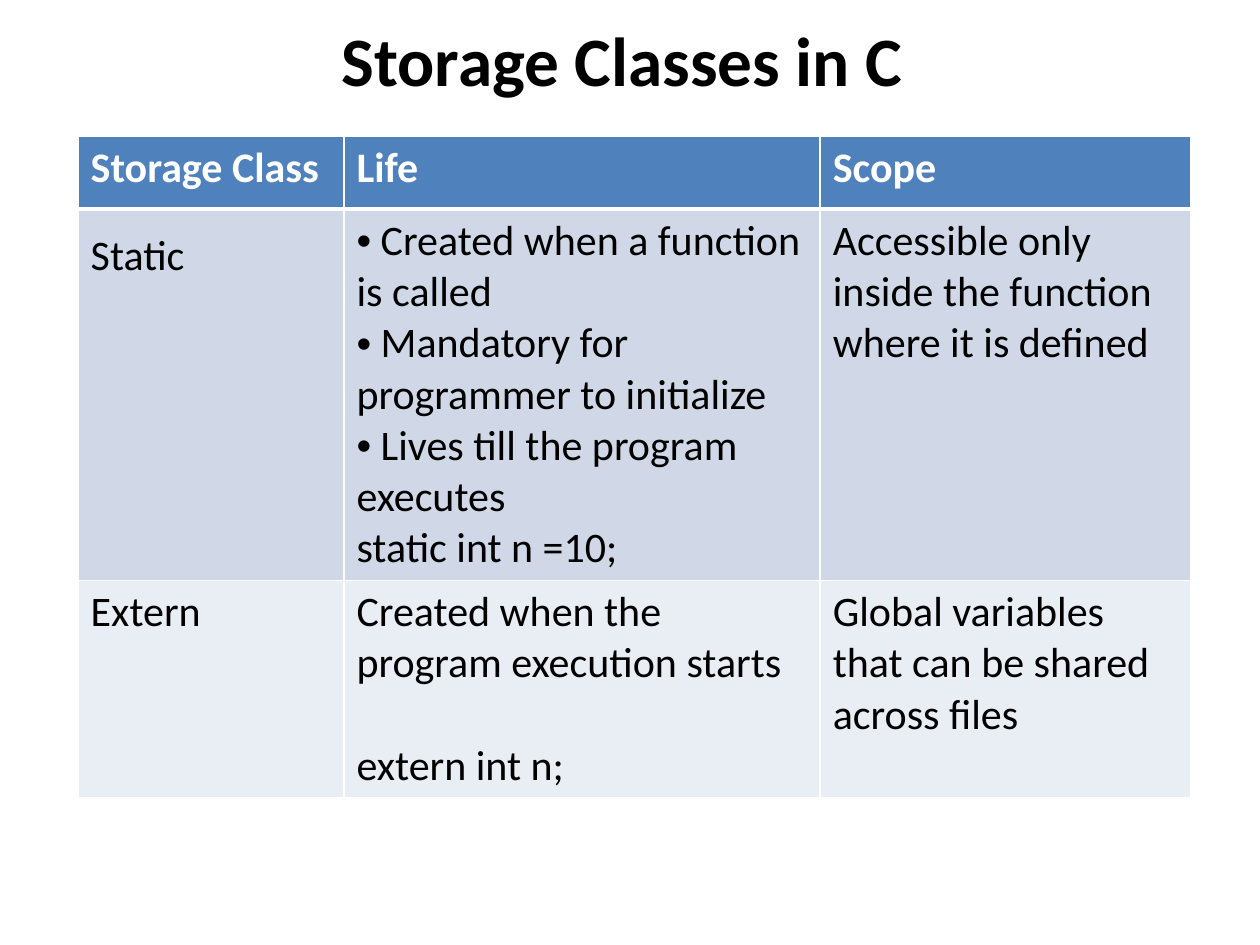
from dataclasses import dataclass

from lxml.etree import SubElement
from pptx import Presentation
from pptx.dml.color import RGBColor
from pptx.enum.text import MSO_ANCHOR, PP_ALIGN
from pptx.oxml.ns import qn
from pptx.util import Inches, Pt


@dataclass(frozen=True)
class Theme:
    font: str = "Calibri"
    title_size: float = 39.6
    body_size: float = 24
    text: str = "000000"
    light: str = "FFFFFF"
    header: str = "4F81BD"
    bands: tuple = ("D0D8E8", "E9EDF4")
    border: float = 1
    header_border: float = 3


THEME = Theme()
TITLE = "Storage Classes in C"
HEADERS = ["Storage Class", "Life", "Scope"]
# Each cell is a list of (text, paragraph format) pairs.
ROWS = [
    [
        [("Static", {"line_spacing": 1.3})],
        [
            (" Created when a function is called", {"bullet": "•"}),
            (" Mandatory for programmer to initialize", {"bullet": "•"}),
            (" Lives till the program executes", {"bullet": "•"}),
            ("static int n =10;", {}),
        ],
        [("Accessible only inside the function where it is defined", {})],
    ],
    [
        [("Extern", {})],
        [
            ("Created when the program execution starts", {}),
            ("extern int n;", {"space_before": 29.3}),
        ],
        [("Global variables that can be shared across files", {})],
    ],
]
COLUMN_WIDTHS = [2.11, 3.78, 2.94]
ROW_HEIGHTS = [0.58, 2.94, 1.72]
TABLE_LEFT, TABLE_TOP = 0.62, 1.08


def write(para, text, size=THEME.body_size, color=THEME.text, bold=False,
          align=None, line_spacing=None, space_before=None, bullet=None):
    span = para.add_run()
    span.text = text
    span.font.name = THEME.font
    span.font.size = Pt(size)
    span.font.bold = bold
    span.font.color.rgb = RGBColor.from_string(color)
    if align is not None:
        para.alignment = align
    if line_spacing:
        para.line_spacing = line_spacing
    if space_before:
        para.space_before = Pt(space_before)
    if bullet:
        properties = para._p.get_or_add_pPr()
        SubElement(properties, qn("a:buFont"), typeface="Arial")
        SubElement(properties, qn("a:buChar"), char=bullet)


def set_borders(cell, top, bottom):
    """Draw the four cell borders; must precede the fill in the cell's XML."""
    properties = cell._tc.get_or_add_tcPr()
    widths = {"L": THEME.border, "R": THEME.border, "T": top, "B": bottom}
    for side, width in widths.items():
        line = SubElement(properties, qn(f"a:ln{side}"), w=str(Pt(width)))
        fill = SubElement(line, qn("a:solidFill"))
        SubElement(fill, qn("a:srgbClr"), val=THEME.light)


def fill_cell(cell, content, fill, top=THEME.border, bottom=THEME.border, **text_format):
    set_borders(cell, top, bottom)
    cell.fill.solid()
    cell.fill.fore_color.rgb = RGBColor.from_string(fill)
    frame = cell.text_frame
    for index, (text, para_format) in enumerate(content):
        para = frame.add_paragraph() if index else frame.paragraphs[0]
        write(para, text, **text_format, **para_format)


def add_title(slide):
    title = slide.shapes.title
    title.left, title.top = Inches(0.19), Inches(0.08)
    title.width, title.height = Inches(9.5), Inches(0.78)
    title.text_frame.vertical_anchor = MSO_ANCHOR.MIDDLE
    write(title.text_frame.paragraphs[0], TITLE, size=THEME.title_size,
          bold=True, align=PP_ALIGN.CENTER)


def add_storage_table(slide):
    table = slide.shapes.add_table(
        len(ROW_HEIGHTS), len(COLUMN_WIDTHS), Inches(TABLE_LEFT), Inches(TABLE_TOP),
        Inches(sum(COLUMN_WIDTHS)), Inches(sum(ROW_HEIGHTS))).table
    for column, width in zip(table.columns, COLUMN_WIDTHS):
        column.width = Inches(width)
    for row, height in zip(table.rows, ROW_HEIGHTS):
        row.height = Inches(height)

    for cell, header in zip(table.rows[0].cells, HEADERS):
        fill_cell(cell, [(header, {})], THEME.header, bottom=THEME.header_border,
                  color=THEME.light, bold=True)
    for index, contents in enumerate(ROWS):
        top = THEME.border if index else THEME.header_border
        for cell, content in zip(table.rows[index + 1].cells, contents):
            fill_cell(cell, content, THEME.bands[index % 2], top=top)


def main():
    deck = Presentation()
    deck.slide_width, deck.slide_height = Inches(10), Inches(7.5)
    slide = deck.slides.add_slide(deck.slide_layouts[5])
    add_title(slide)
    add_storage_table(slide)
    deck.save("out.pptx")


if __name__ == "__main__":
    main()
